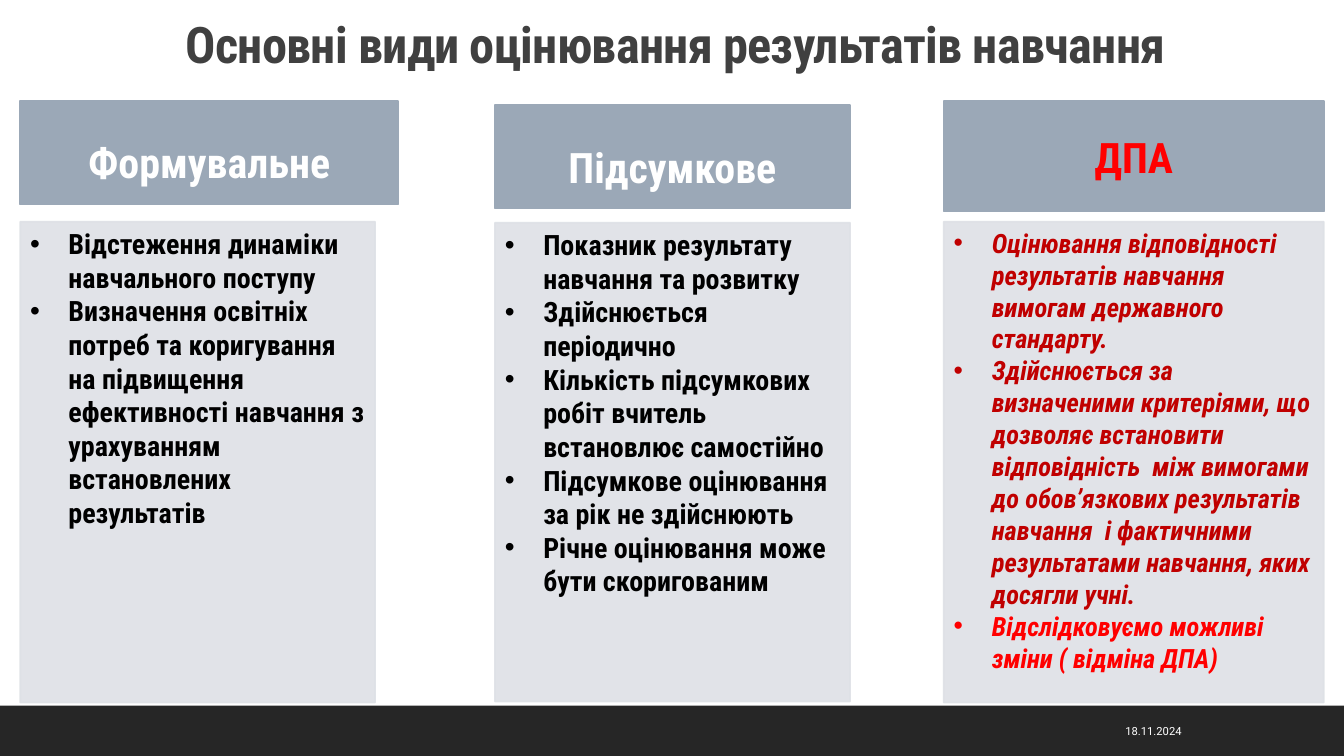
"""Build the slide on the main types of assessment of learning results."""
from dataclasses import dataclass

from lxml import etree
from pptx import Presentation
from pptx.dml.color import RGBColor
from pptx.enum.shapes import MSO_SHAPE
from pptx.enum.text import MSO_ANCHOR, MSO_AUTO_SIZE, PP_ALIGN
from pptx.oxml.ns import qn
from pptx.util import Inches, Pt

RECTANGLE = MSO_SHAPE.RECTANGLE
TOP, MIDDLE, BOTTOM = MSO_ANCHOR.TOP, MSO_ANCHOR.MIDDLE, MSO_ANCHOR.BOTTOM
LEFT, CENTER, RIGHT = PP_ALIGN.LEFT, PP_ALIGN.CENTER, PP_ALIGN.RIGHT
NO_FIT = MSO_AUTO_SIZE.NONE


@dataclass(frozen=True)
class Theme:
    font: str = "Roboto Condensed"
    date_font: str = "Roboto"
    title: str = "404040"
    header: str = "9BA8B7"
    panel: str = "DEE1E6"
    footer: str = "262626"
    white: str = "FFFFFF"
    black: str = "000000"
    dark_red: str = "C00000"
    red: str = "FF0000"
    title_size: int = 36
    header_size: int = 30
    body_size: int = 20
    exam_size: int = 19
    date_size: int = 8


theme = Theme()


def add_box(page, bounds, color, outlined=True):
    box = page.shapes.add_shape(RECTANGLE, *map(Inches, bounds))
    box.shadow.inherit = False
    box.fill.solid()
    box.fill.fore_color.rgb = RGBColor.from_string(color)
    if outlined:
        box.line.color.rgb = RGBColor.from_string(color)
        box.line.width = Pt(1.25)
    else:
        box.line.fill.background()
    return box


def add_span(para, text, size, color, font=theme.font, bold=True, italic=False):
    span = para.add_run()
    span.text = text
    span.font.name = font
    span.font.size = Pt(size)
    span.font.bold = bold
    span.font.italic = italic
    span.font.color.rgb = RGBColor.from_string(color)
    return span


deck = Presentation()
deck.slide_width, deck.slide_height = Inches(13.33), Inches(7.5)
page = deck.slides.add_slide(deck.slide_layouts[5])

add_box(page, (0, 7, 13.33, 0.5), theme.footer, outlined=False)

title = page.shapes.title
title.left, title.top = Inches(1.2), Inches(0.05)
title.width, title.height = Inches(11), Inches(0.74)
title.text_frame.vertical_anchor = BOTTOM
title.text_frame.auto_size = NO_FIT
para = title.text_frame.paragraphs[0]
para.alignment = CENTER
para.line_spacing = 0.9
span = add_span(para, "Основні види оцінювання результатів навчання", theme.title_size, theme.title)
span.font._element.set("spc", "-50")

columns = [
    {
        "heading": "Формувальне", "heading_color": theme.white,
        "header": (0.2, 1, 3.75, 1.03), "text_drop": 0.12,
        "panel": (0.2, 2.2, 3.52, 4.77), "size": theme.body_size, "italic": False,
        "items": [
            ("Відстеження динаміки навчального поступу", theme.black),
            ("Визначення освітніх потреб та коригування на підвищення ефективності "
             "навчання з урахуванням встановлених результатів", theme.black),
        ],
    },
    {
        "heading": "Підсумкове", "heading_color": theme.white,
        "header": (4.91, 1.04, 3.52, 1.03), "text_drop": 0.13,
        "panel": (4.91, 2.21, 3.52, 4.75), "size": theme.body_size, "italic": False,
        "items": [
            ("Показник результату навчання та розвитку", theme.black),
            ("Здійснюється періодично", theme.black),
            ("Кількість підсумкових робіт вчитель встановлює самостійно", theme.black),
            ("Підсумкове оцінювання за рік не здійснюють", theme.black),
            ("Річне оцінювання може бути скоригованим", theme.black),
        ],
    },
    {
        "heading": "ДПА", "heading_color": theme.red,
        "header": (9.36, 1, 3.77, 1.1), "text_drop": 0.04,
        "panel": (9.36, 2.2, 3.77, 4.77), "size": theme.exam_size, "italic": True,
        "items": [
            ("Оцінювання відповідності результатів навчання вимогам державного стандарту.",
             theme.dark_red),
            ("Здійснюється за визначеними критеріями, що дозволяє встановити відповідність  "
             "між вимогами до обов’язкових результатів навчання  і фактичними результатами "
             "навчання, яких досягли учні.", theme.dark_red),
            ("Відслідковуємо можливі зміни ( відміна ДПА)", theme.red),
        ],
    },
]

for column in columns:
    header = add_box(page, column["header"], theme.header)
    frame = header.text_frame
    frame.word_wrap = True
    frame.vertical_anchor = MIDDLE
    frame.margin_top, frame.margin_bottom = Inches(2 * column["text_drop"]), 0
    para = frame.paragraphs[0]
    para.alignment = CENTER
    para.line_spacing = 0.9
    add_span(para, column["heading"], theme.header_size, column["heading_color"])

    panel = add_box(page, column["panel"], theme.panel)
    for color in panel._element.spPr.iter(qn("a:srgbClr")):
        etree.SubElement(color, qn("a:alpha"), val="90000")
    frame = panel.text_frame
    frame.word_wrap = True
    frame.vertical_anchor = TOP
    for index, (text, color) in enumerate(column["items"]):
        para = frame.add_paragraph() if index else frame.paragraphs[0]
        para.alignment = LEFT
        layout = para._p.get_or_add_pPr()
        layout.set("marL", str(Inches(0.38)))
        layout.set("indent", str(Inches(-0.38)))
        etree.SubElement(layout, qn("a:buFont"), typeface="Arial")
        etree.SubElement(layout, qn("a:buChar"), char="•")
        add_span(para, text, column["size"], color, italic=column["italic"])

date = page.shapes.add_textbox(Inches(8.99), Inches(7.05), Inches(2.83), Inches(0.4))
date.text_frame.word_wrap = True
date.text_frame.vertical_anchor = MIDDLE
para = date.text_frame.paragraphs[0]
para.alignment = RIGHT
add_span(para, "18.11.2024", theme.date_size, theme.white, theme.date_font, bold=False)

deck.save("out.pptx")
